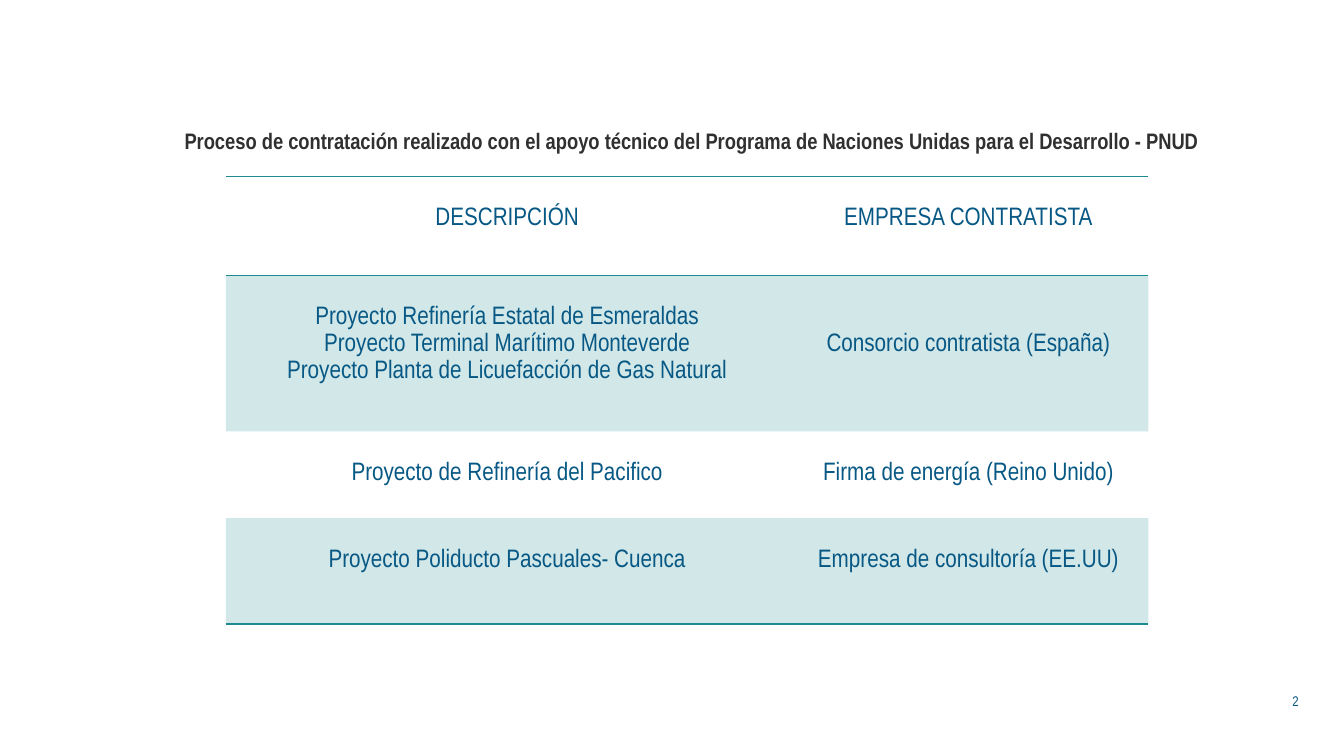
import dataclasses
import typing

import lxml.etree
import pptx
import pptx.dml.color
import pptx.enum.text
import pptx.oxml.ns
import pptx.util

Inches = pptx.util.Inches
Pt = pptx.util.Pt
Align = pptx.enum.text.PP_ALIGN
Anchor = pptx.enum.text.MSO_ANCHOR
qn = pptx.oxml.ns.qn

FACE = "Arial Narrow"
BLUE = "075884"
TEAL = "1D8A8F"
DARK = "303030"
LINE = 0.27
WIDTHS = (5.58, 3.57)


@dataclasses.dataclass
class Row:
    tall: float
    left: tuple[str, ...]
    right: str
    tint: bool = False
    edges: str = ""
    drop: int = 1


@dataclasses.dataclass
class Label:
    text: str
    box: tuple[float, float, float, float]
    font: dict[str, typing.Any]
    color: str
    para: dict[str, typing.Any]
    frame: dict[str, typing.Any]


ROWS = [
    Row(0.98, ("DESCRIPCIÓN",), "EMPRESA CONTRATISTA", edges="TB"),
    Row(1.55, ("Proyecto Refinería Estatal de Esmeraldas",
               "Proyecto Terminal Marítimo Monteverde",
               "Proyecto Planta de Licuefacción de Gas Natural"),
        "Consorcio contratista (España)", tint=True, edges="T", drop=2),
    Row(0.86, ("Proyecto de Refinería del Pacifico",), "Firma de energía (Reino Unido)"),
    Row(1.05, ("Proyecto Poliducto Pascuales- Cuenca",),
        "Empresa de consultoría (EE.UU)", tint=True, edges="B"),
]

TITLE = Label(
    "Proceso de contratación realizado con el apoyo técnico del Programa "
    "de Naciones Unidas para el Desarrollo - PNUD",
    (1.83, 1.26, 10.38, 0.27),
    {"name": FACE, "size": Pt(16), "bold": True}, DARK,
    {"alignment": Align.LEFT, "line_spacing": 1.0, "space_before": Pt(0)},
    {"margin_left": 0, "margin_right": 0, "margin_top": 0, "margin_bottom": 0,
     "vertical_anchor": Anchor.TOP, "word_wrap": True,
     "auto_size": pptx.enum.text.MSO_AUTO_SIZE.SHAPE_TO_FIT_TEXT},
)
NUMBER = Label(
    "2", (12.37, 6.75, 0.61, 0.4),
    {"name": FACE, "size": Pt(10)}, BLUE,
    {"alignment": Align.RIGHT},
    {"margin_left": 0, "vertical_anchor": Anchor.MIDDLE, "word_wrap": True},
)
CELL_FONT = {"name": FACE, "size": Pt(18), "bold": False}
CELL_PARA = {"alignment": Align.CENTER, "line_spacing": 1.15}


def apply(item: typing.Any, look: dict[str, typing.Any]) -> None:
    for key, value in look.items():
        setattr(item, key, value)


def rgb(code: str) -> pptx.dml.color.RGBColor:
    return pptx.dml.color.RGBColor.from_string(code)


def write(frame: typing.Any, lines: tuple[str, ...], font: dict[str, typing.Any],
          color: str, look: dict[str, typing.Any]) -> None:
    frame.text = "\n".join(lines)
    for para in frame.paragraphs:
        apply(para, look)
        for run in para.runs:
            apply(run.font, font)
            run.font.color.rgb = rgb(color)


def place(shape: typing.Any, label: Label) -> None:
    spots = map(Inches, label.box)
    apply(shape, dict(zip(("left", "top", "width", "height"), spots)))
    apply(shape.text_frame, label.frame)
    write(shape.text_frame, (label.text,), label.font, label.color, label.para)


def border(cell: typing.Any, edges: str) -> None:
    props = cell._tc.get_or_add_tcPr()
    for side in "LRTB":
        line = lxml.etree.SubElement(props, qn(f"a:ln{side}"), w=str(Pt(1)))
        if side in edges:
            fill = lxml.etree.SubElement(line, qn("a:solidFill"))
            lxml.etree.SubElement(fill, qn("a:srgbClr"), val=TEAL)
        else:
            lxml.etree.SubElement(line, qn("a:noFill"))


def shade(cell: typing.Any, tint: bool) -> None:
    if not tint:
        cell.fill.background()
        return
    cell.fill.solid()
    cell.fill.fore_color.rgb = rgb(TEAL)
    tone = cell._tc.tcPr.find(qn("a:solidFill")).find(qn("a:srgbClr"))
    lxml.etree.SubElement(tone, qn("a:alpha"), val="20000")


def draw(slide: typing.Any) -> None:
    high = sum(row.tall for row in ROWS)
    table = slide.shapes.add_table(
        len(ROWS), len(WIDTHS), Inches(2.24), Inches(1.75),
        Inches(sum(WIDTHS)), Inches(high)).table
    apply(table, {"first_row": False, "horz_banding": False})
    for col, wide in zip(table.columns, WIDTHS):
        col.width = Inches(wide)
    for line, row in zip(table.rows, ROWS):
        line.height = Inches(row.tall)
        parts = ((row.left, 1, 0.07), ((row.right,), row.drop, 0))
        for cell, (lines, drop, pad) in zip(line.cells, parts):
            apply(cell, {
                "margin_left": Inches(pad), "margin_right": Inches(pad),
                "margin_top": Inches(LINE * drop), "margin_bottom": 0,
                "vertical_anchor": Anchor.TOP,
            })
            write(cell.text_frame, lines, CELL_FONT, BLUE, CELL_PARA)
            border(cell, row.edges)
            shade(cell, row.tint)


def main() -> None:
    deck = pptx.Presentation()
    apply(deck, {"slide_width": Inches(13.33), "slide_height": Inches(7.5)})
    slide = deck.slides.add_slide(deck.slide_layouts[5])
    place(slide.shapes.title, TITLE)
    draw(slide)
    place(slide.shapes.add_textbox(*map(Inches, NUMBER.box)), NUMBER)
    deck.save("out.pptx")


if __name__ == "__main__":
    main()
